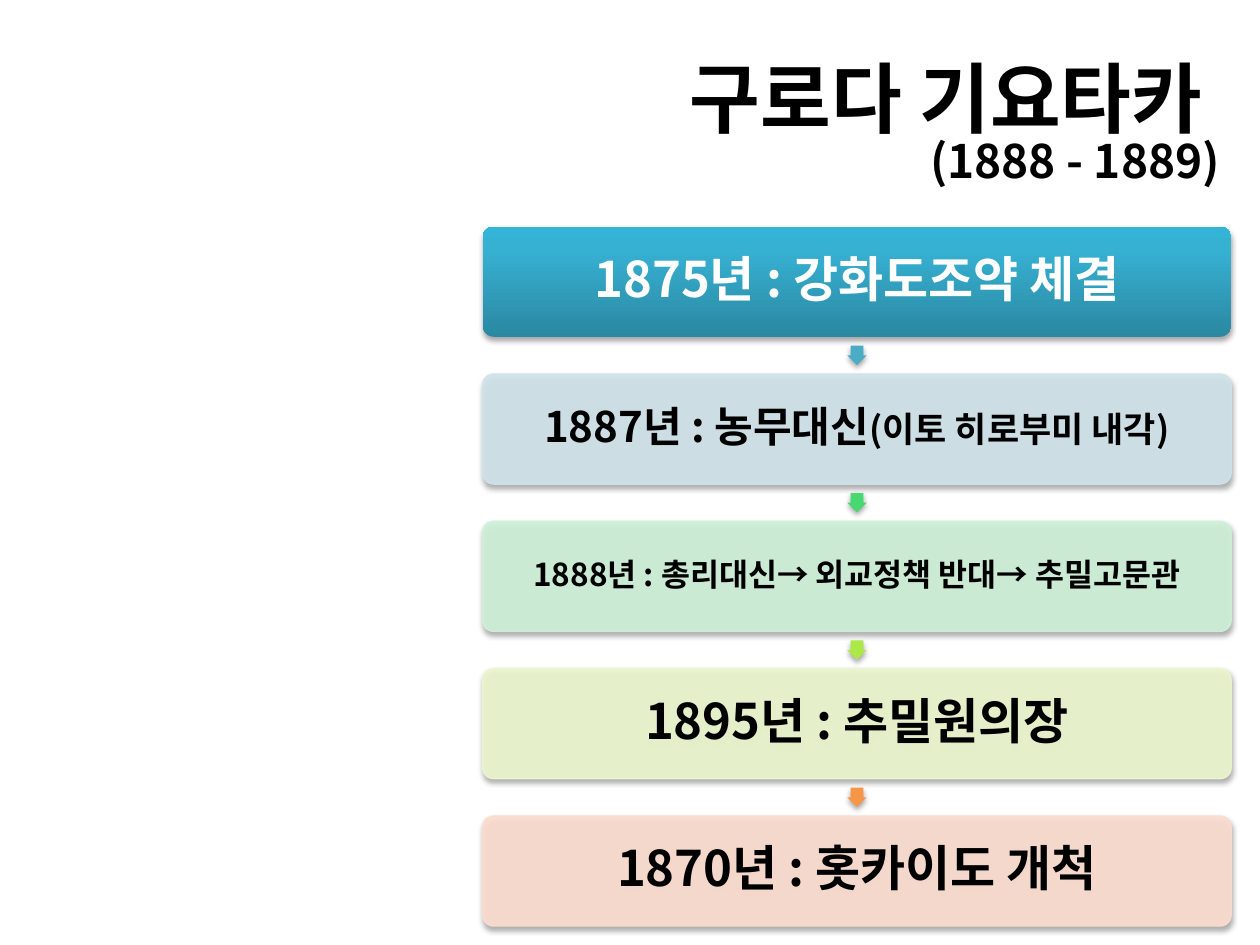
from lxml.etree import SubElement
from pptx import Presentation
from pptx.dml.color import RGBColor
from pptx.enum.shapes import MSO_SHAPE
from pptx.enum.text import MSO_ANCHOR, PP_ALIGN
from pptx.oxml import parse_xml
from pptx.oxml.ns import nsdecls, qn
from pptx.util import Cm, Pt

FONT = "Noto Sans CJK KR"
TITLE = [("구로다 기요타카 ", 43.9), ("(1888 - 1889)", 26.3)]
# Runs, fill (None for the highlighted first event), text colour
EVENTS = [
    ([("1875년 : 강화도조약 체결", 28)], None, "FFFFFF"),
    ([("1887년 : 농무대신", 24), ("(이토 히로부미 내각)", 20)], "D0E3EA", "000000"),
    ([("1888년 : 총리대신→ 외교정책 반대→ 추밀고문관", 18)], "CFF1D9", "000000"),
    ([("1895년 : 추밀원의장", 28)], "EBF7CE", "000000"),
    ([("1870년 : 홋카이도 개척", 28)], "FCDDCF", "000000"),
]
ARROW_COLORS = ["4BACC6", "47D872", "ACE946", "F79646"]
HIGHLIGHT_STOPS = [(0, "2A88A2"), (80, "37B1D2"), (100, "34B4D6")]

LEFT, TOP = Cm(9.73), Cm(4.57)
WIDTH, HEIGHT = Cm(15.09), Cm(2.22)
PITCH = Cm(2.97)
ARROW = Cm(0.39)


def color(hex_code):
    return RGBColor.from_string(hex_code)


def add_run(paragraph, text, size, hex_code):
    run = paragraph.add_run()
    run.text = text
    run.font.size = Pt(size)
    run.font.bold = True
    run.font.name = FONT
    run.font.color.rgb = color(hex_code)
    SubElement(run.font._element, qn("a:ea"), typeface=FONT)


def set_margins(frame, margin):
    frame.margin_left = frame.margin_right = margin
    frame.margin_top = frame.margin_bottom = margin


def add_shadow(shape):
    shape._element.spPr.append(parse_xml(
        f'<a:effectLst {nsdecls("a")}><a:outerShdw blurRad="{Pt(3.1)}" dist="{Pt(1.8)}" '
        'dir="5400000" rotWithShape="0"><a:srgbClr val="000000"><a:alpha val="35000"/>'
        '</a:srgbClr></a:outerShdw></a:effectLst>'))


def fill_highlight(shape):
    """Three-stop gradient running from the bottom edge to the top."""
    stops = "".join(f'<a:gs pos="{pos * 1000}"><a:srgbClr val="{code}"/></a:gs>'
                    for pos, code in HIGHLIGHT_STOPS)
    shape._element.spPr.find(qn("a:prstGeom")).addnext(parse_xml(
        f'<a:gradFill {nsdecls("a")} rotWithShape="1"><a:gsLst>{stops}</a:gsLst>'
        '<a:lin ang="16200000" scaled="0"/></a:gradFill>'))
    shape.line.fill.background()


def fill_translucent(shape, hex_code):
    shape.line.width = Pt(0.75)
    for fill in (shape.fill, shape.line.fill):
        fill.solid()
        fill.fore_color.rgb = color(hex_code)
    for rgb in shape._element.spPr.iter(qn("a:srgbClr")):
        SubElement(rgb, qn("a:alpha"), val="90000")


def add_title(slide):
    title = slide.shapes.add_textbox(Cm(1.98), Cm(0.99), Cm(22.86), Cm(3.18))
    frame = title.text_frame
    frame.word_wrap = True
    frame.vertical_anchor = MSO_ANCHOR.MIDDLE
    for i, (text, size) in enumerate(TITLE):
        paragraph = frame.add_paragraph() if i else frame.paragraphs[0]
        paragraph.alignment = PP_ALIGN.RIGHT
        paragraph.line_spacing = 0.8
        add_run(paragraph, text, size, "000000")


def add_event(slide, top, runs, fill, text_color):
    event = slide.shapes.add_shape(MSO_SHAPE.ROUNDED_RECTANGLE, LEFT, top, WIDTH, HEIGHT)
    event.adjustments[0] = 0.1
    if fill:
        fill_translucent(event, fill)
    else:
        fill_highlight(event)
    add_shadow(event)
    frame = event.text_frame
    frame.word_wrap = True
    frame.vertical_anchor = MSO_ANCHOR.MIDDLE
    set_margins(frame, Cm(0.1))
    paragraph = frame.paragraphs[0]
    paragraph.alignment = PP_ALIGN.CENTER
    paragraph.line_spacing = 0.9
    for text, size in runs:
        add_run(paragraph, text, size, text_color)


def add_arrow(slide, center_y, hex_code):
    arrow = slide.shapes.add_shape(
        MSO_SHAPE.RIGHT_ARROW, LEFT + (WIDTH - ARROW) // 2, center_y - ARROW // 2, ARROW, ARROW)
    arrow.rotation = 90
    arrow.adjustments[0] = 0.667
    arrow.adjustments[1] = 0.5
    arrow.fill.solid()
    arrow.fill.fore_color.rgb = color(hex_code)
    arrow.line.fill.background()
    add_shadow(arrow)


def main():
    deck = Presentation()
    deck.slide_width, deck.slide_height = Cm(25.4), Cm(19.05)
    slide = deck.slides.add_slide(deck.slide_layouts[6])
    add_title(slide)
    for i, event in enumerate(EVENTS):
        add_event(slide, TOP + i * PITCH, *event)
    for i, hex_code in enumerate(ARROW_COLORS):
        add_arrow(slide, TOP + i * PITCH + (HEIGHT + PITCH) // 2, hex_code)
    deck.save("out.pptx")


if __name__ == "__main__":
    main()
